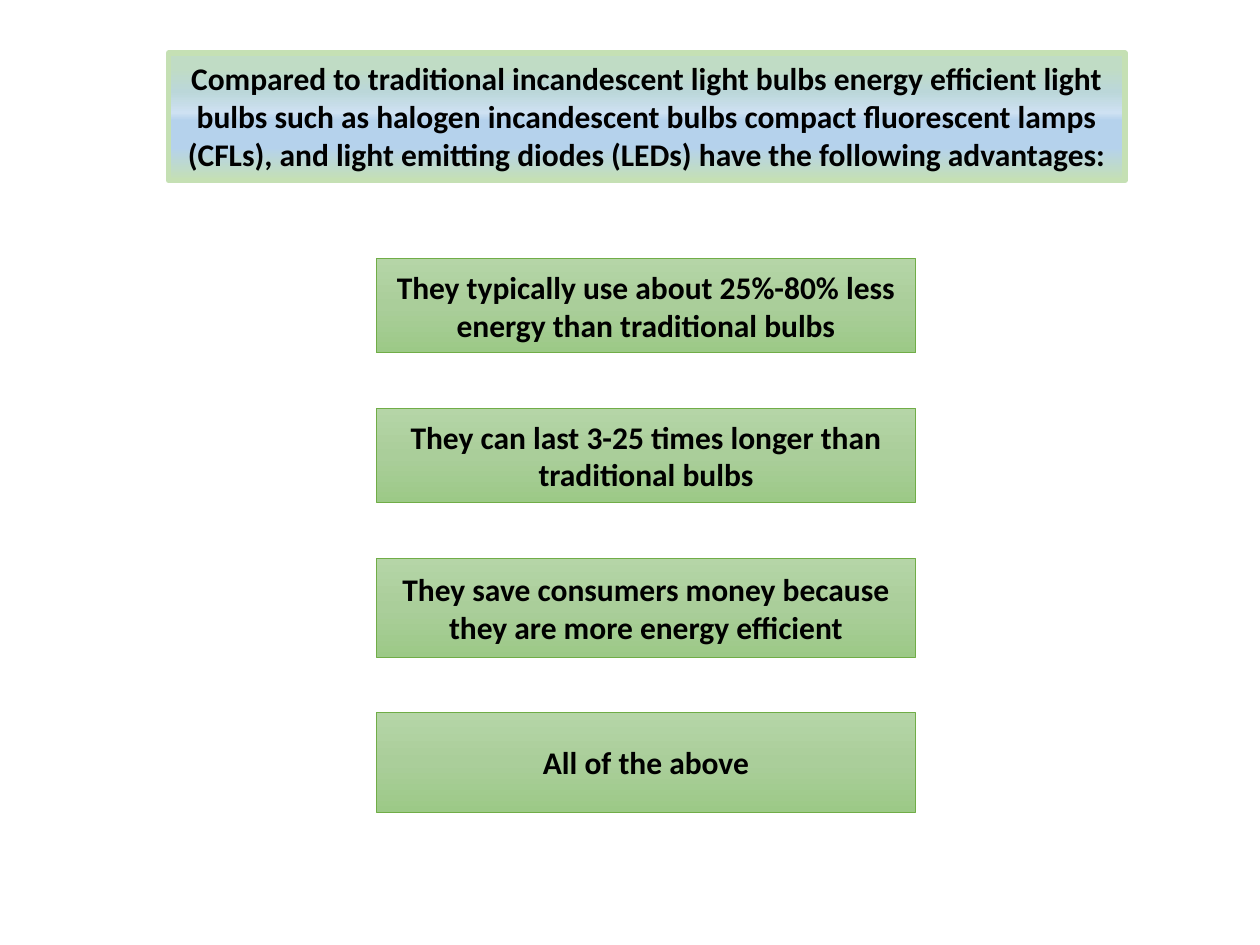
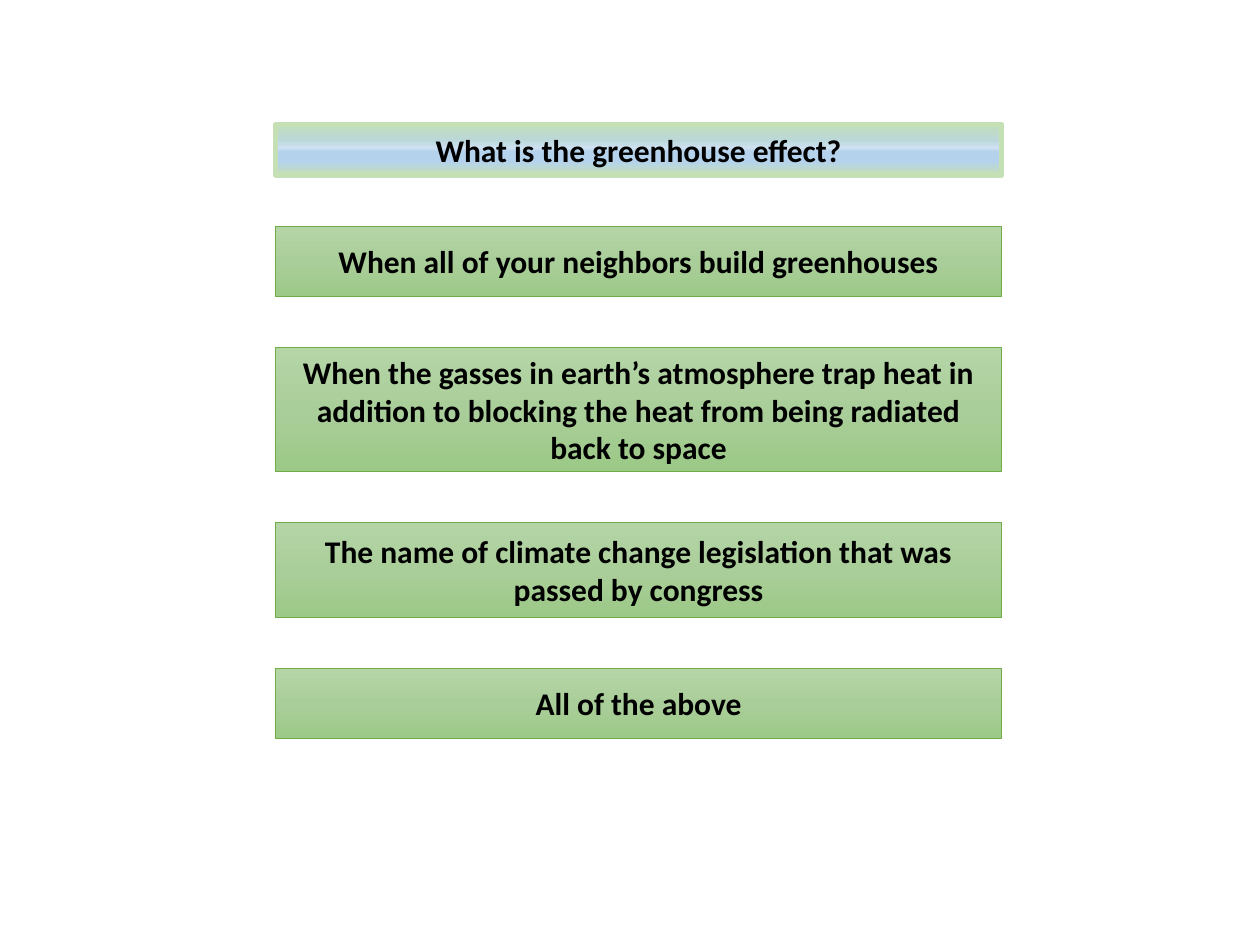
from lxml.etree import SubElement
from pptx import Presentation
from pptx.dml.color import RGBColor
from pptx.enum.shapes import MSO_SHAPE
from pptx.enum.text import MSO_ANCHOR, MSO_AUTO_SIZE, PP_ALIGN
from pptx.oxml.ns import qn
from pptx.util import Cm, Pt

# Content: question box, then the column of answers (lengths in cm)
QUIZ = [
    {
        "ask": "Compared to traditional incandescent light bulbs energy efficient "
               "light bulbs such as halogen incandescent bulbs compact fluorescent "
               "lamps (CFLs), and light emitting diodes (LEDs) have the following "
               "advantages:",
        "box": (3.4, 1.07, 19.28, 2.57),
        "left": 7.59, "top": 5.21, "width": 10.87, "gap": 1.12,
        "answers": [
            ("They typically use about 25%-80% less energy than traditional bulbs", 1.9),
            ("They can last 3-25 times longer than traditional bulbs", 1.9),
            ("They save consumers money because they are more energy efficient", 2),
            ("All of the above", 2),
        ],
    },
    {
        "ask": "What is the greenhouse effect?",
        "box": (5.56, 2.51, 14.63, 1.02),
        "left": 5.56, "top": 4.57, "width": 14.63, "gap": 1.04,
        "answers": [
            ("When all of your neighbors build greenhouses", 1.4),
            ("When the gasses in earth’s atmosphere trap heat in addition to "
             "blocking the heat from being radiated back to space", 2.49),
            ("The name of climate change legislation that was passed by congress", 1.9),
            ("All of the above", 1.4),
        ],
    },
]

# Shared looks
BLACK = RGBColor(0x00, 0x00, 0x00)
GREEN = RGBColor(0x70, 0xAD, 0x47)
LEAF = RGBColor(0xB5, 0xD5, 0xA7)
MOSS = RGBColor(0xAA, 0xCE, 0x9A)
FERN = RGBColor(0x9C, 0xC9, 0x87)
LIME = RGBColor(0xC5, 0xE0, 0xB4)
MINT = RGBColor(0xC0, 0xDC, 0xC5)
TEAL = RGBColor(0xBB, 0xD7, 0xD9)
PALE = RGBColor(0xCE, 0xE1, 0xF2)
SKY = RGBColor(0xB5, 0xD2, 0xEC)

FONT = {"name": "Calibri", "size": Pt(18), "bold": True}
ASK = {
    "kind": MSO_SHAPE.RECTANGLE,
    "stops": [(12, MINT), (30, TEAL), (47, PALE), (53, SKY), (74, SKY), (100, LIME)],
    "line": LIME, "weight": 3,
    "frame": {"word_wrap": True, "vertical_anchor": MSO_ANCHOR.TOP,
              "auto_size": MSO_AUTO_SIZE.SHAPE_TO_FIT_TEXT},
}
ANSWER = {
    "kind": MSO_SHAPE.ACTION_BUTTON_CUSTOM,
    "stops": [(0, LEAF), (50, MOSS), (100, FERN)],
    "line": GREEN, "weight": 0.5,
    "frame": {"word_wrap": True, "vertical_anchor": MSO_ANCHOR.MIDDLE},
}


def assign(item, values):
    for name, value in values.items():
        setattr(item, name, value)


def shade(shape, stops):
    """Fill from top to bottom with (percent, colour) stops."""
    shape.fill.gradient()
    shape.fill.gradient_angle = 270
    ramp = next(shape._element.spPr.iter(qn("a:gsLst")))
    for old in list(ramp):
        ramp.remove(old)
    for place, color in stops:
        stop = SubElement(ramp, qn("a:gs"), pos=str(place * 1000))
        SubElement(stop, qn("a:srgbClr"), val=str(color))


def add_box(slide, text, box, look):
    shape = slide.shapes.add_shape(look["kind"], *map(Cm, box))
    shape.shadow.inherit = False
    shade(shape, look["stops"])
    shape.line.color.rgb = look["line"]
    shape.line.width = Pt(look["weight"])
    frame = shape.text_frame
    assign(frame, look["frame"])
    para = frame.paragraphs[0]
    para.alignment = PP_ALIGN.CENTER
    run = para.add_run()
    run.text = text
    assign(run.font, FONT)
    run.font.color.rgb = BLACK


def main():
    deck = Presentation()
    assign(deck, {"slide_width": Cm(25.4), "slide_height": Cm(19.05)})
    for quiz in QUIZ:
        slide = deck.slides.add_slide(deck.slide_layouts[6])
        # Answers stack downward with an equal gap
        top = quiz["top"]
        for text, height in quiz["answers"]:
            add_box(slide, text, (quiz["left"], top, quiz["width"], height), ANSWER)
            top += height + quiz["gap"]
        # Question
        add_box(slide, quiz["ask"], quiz["box"], ASK)
    deck.save("out.pptx")


if __name__ == "__main__":
    main()
